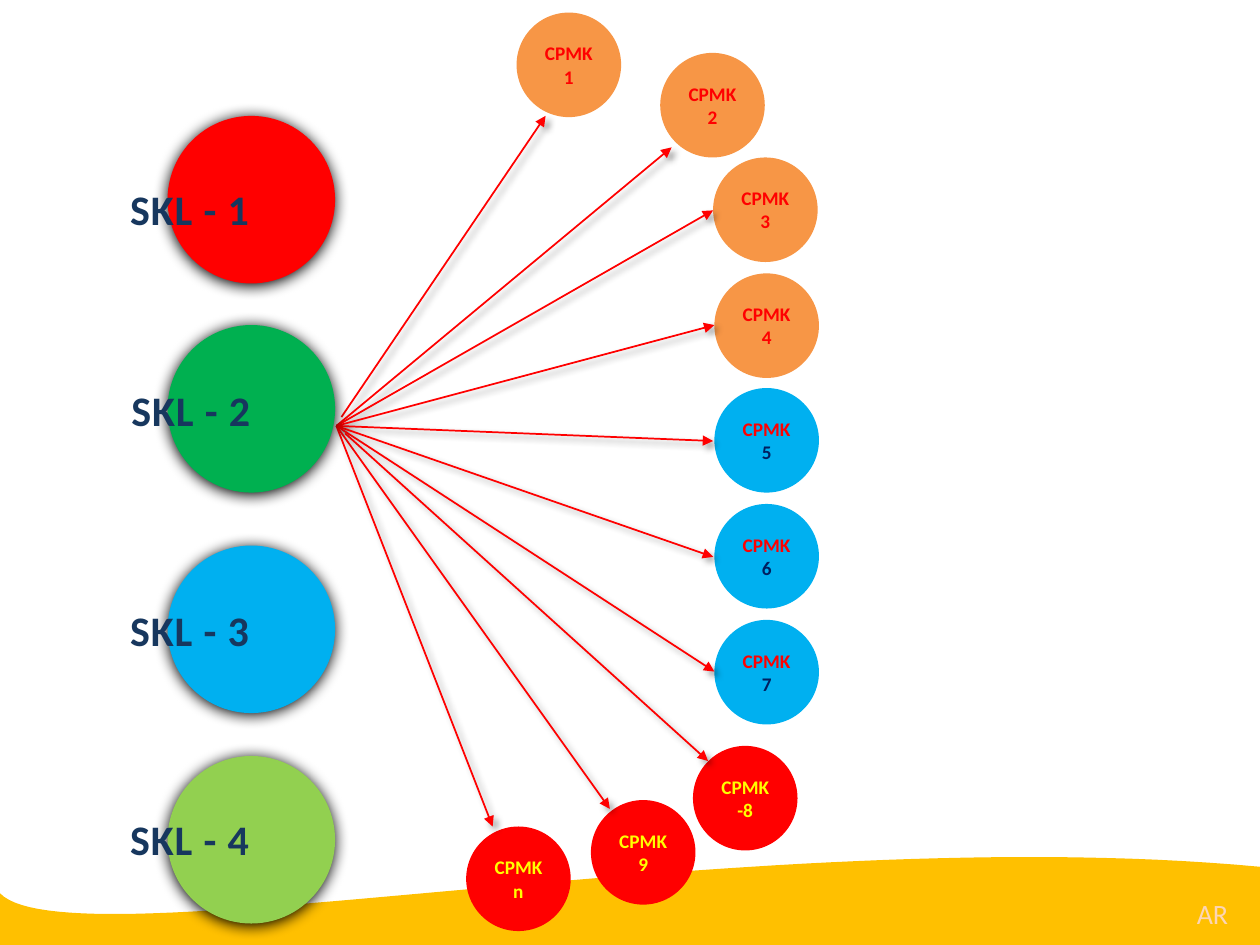
from lxml.etree import SubElement
from pptx import Presentation
from pptx.dml.color import RGBColor
from pptx.enum.shapes import MSO_CONNECTOR, MSO_SHAPE
from pptx.enum.text import MSO_ANCHOR, PP_ALIGN
from pptx.oxml.ns import qn
from pptx.util import Inches, Pt

COLORS = {
    "red": "FF0000", "green": "00B050", "blue": "00B0F0", "lime": "92D050",
    "orange": "F79646", "yellow": "FFFF00", "navy": "002060",
    "label": "17375E", "wave": "FFC000", "mark": "FCD5B5", "black": "000000",
}

# Content: name, fill, circle top, label left, label top
SKILLS = [
    ("SKL - 1", "red", 0.92, 0.67, 1.41),
    ("SKL - 2", "green", 2.58, 0.68, 3),
    ("SKL - 3", "blue", 4.33, 0.67, 4.75),
    ("SKL - 4", "lime", 6, 0.67, 6.41),
]
# Name, number, group, circle position, arrow tip
COURSES = [
    ("CPMK", "1", "first", (4.1, 0.1), (4.33, 0.92)),
    ("CPMK", "2", "first", (5.24, 0.42), (5.33, 1.17)),
    ("CPMK", "3", "first", (5.66, 1.25), (5.66, 1.67)),
    ("CPMK", "4", "first", (5.67, 2.17), (5.67, 2.58)),
    ("CPMK", "5", "middle", (5.67, 3.08), (5.66, 3.5)),
    ("CPMK", "6", "middle", (5.67, 4), (5.66, 4.42)),
    ("CPMK", "7", "middle", (5.67, 4.92), (5.67, 5.33)),
    ("CPMK", "-8", "last", (5.5, 5.92), (5.62, 6.04)),
    ("CPMK", "9", "last", (4.69, 6.35), (4.84, 6.42)),
    ("CPMK", "n", "last", (3.7, 6.56), (3.91, 6.56)),
]
# Fill, name colour, number colour
GROUPS = {
    "first": ("orange", "red", "red"),
    "middle": ("blue", "red", "navy"),
    "last": ("red", "yellow", "yellow"),
}
HUB = (2.67, 3.38)
STARTS = {"1": (2.71, 3.31), "-8": (2.74, 3.44)}
SKILL_SIZE, COURSE_SIZE = 1.33, 0.83
WAVE = [(0, 7.09), (0.56, 7.67), (5.96, 6.5), (10, 6.88)]
WAVE_STEPS = 60


def rgb(name):
    return RGBColor.from_string(COLORS[name])


def add_run(p, text, size, color, bold=False):
    r = p.add_run()
    r.text = text
    for key, value in {"name": "Calibri", "size": Pt(size), "bold": bold}.items():
        setattr(r.font, key, value)
    r.font.color.rgb = rgb(color)
    return r


def fill_shape(sp, color):
    sp.shadow.inherit = False
    sp.fill.solid()
    sp.fill.fore_color.rgb = rgb(color)
    sp.line.fill.background()


def add_circle(shapes, x, y, size, color):
    sp = shapes.add_shape(MSO_SHAPE.OVAL, *map(Inches, (x, y, size, size)))
    fill_shape(sp, color)
    return sp


def add_text(shapes, x, y, w, h, wrap=True):
    tf = shapes.add_textbox(*map(Inches, (x, y, w, h))).text_frame
    tf.word_wrap = wrap
    return tf.paragraphs[0]


def add_shadow(sp, alpha, blur, dist, angle):
    spPr = sp._element.spPr
    effects = spPr.find(qn("a:effectLst"))
    if effects is None:
        effects = SubElement(spPr, qn("a:effectLst"))
    shadow = SubElement(effects, qn("a:outerShdw"), {
        "blurRad": str(Pt(blur)), "dist": str(Pt(dist)),
        "dir": str(angle * 60000), "algn": "ctr", "rotWithShape": "0"})
    color = SubElement(shadow, qn("a:srgbClr"), val=COLORS["black"])
    SubElement(color, qn("a:alpha"), val=str(alpha * 1000))


def add_arrow(shapes, start, end):
    line = shapes.add_connector(MSO_CONNECTOR.STRAIGHT, *map(Inches, (*start, *end)))
    line.line.width = Pt(1)
    line.line.color.rgb = rgb("red")
    SubElement(line.line._get_or_add_ln(), qn("a:tailEnd"), type="triangle")
    add_shadow(line, 40, 4, 3, 45)


def bezier(points, t):
    weights = ((1 - t) ** 3, 3 * t * (1 - t) ** 2, 3 * t ** 2 * (1 - t), t ** 3)
    return tuple(Inches(sum(w * pt[i] for w, pt in zip(weights, points)))
                 for i in (0, 1))


prs = Presentation()
prs.slide_width, prs.slide_height = Inches(10), Inches(7.5)
s = prs.slides.add_slide(prs.slide_layouts[6])

# Wave along the bottom edge
curve = [bezier(WAVE, i / WAVE_STEPS) for i in range(WAVE_STEPS + 1)]
corners = [(Inches(10), Inches(7.5)), (0, Inches(7.5))]
outline = s.shapes.build_freeform(*curve[0], scale=1.0)
outline.add_line_segments(curve[1:] + corners, close=True)
fill_shape(outline.convert_to_shape(), "wave")
add_run(add_text(s.shapes, 9.4, 7.07, 0.63, 0.37, wrap=False), "AR", 16, "mark")

# Course circles
for name, number, group, (x, y), tip in COURSES:
    fill, name_color, number_color = GROUPS[group]
    sp = add_circle(s.shapes, x, y, COURSE_SIZE, fill)
    tf = sp.text_frame
    for key, value in {"word_wrap": True, "vertical_anchor": MSO_ANCHOR.MIDDLE,
                       "margin_left": Inches(0.09),
                       "margin_right": Inches(0.09)}.items():
        setattr(tf, key, value)
    p = tf.paragraphs[0]
    p.alignment = PP_ALIGN.CENTER
    if name_color == number_color:
        add_run(p, name + number, 11, name_color, bold=True)
    else:
        add_run(p, name, 11, name_color, bold=True)
        add_run(p, number, 11, number_color, bold=True)

# Arrows from the second skill to each course
for name, number, group, corner, tip in COURSES:
    add_arrow(s.shapes, STARTS.get(number, HUB), tip)

# Skill circles with their labels
for name, fill, top, label_left, label_top in SKILLS:
    shapes = s.shapes.add_group_shape().shapes
    add_shadow(add_circle(shapes, 1.33, top, SKILL_SIZE, fill), 100, 8.5, 1, 90)
    p = add_text(shapes, label_left, label_top, 1.67, 0.5)
    p.alignment = PP_ALIGN.CENTER
    r = add_run(p, name, 24, "label", bold=True)
    r._r.get_or_add_rPr().set("spc", "50")

prs.save("out.pptx")
